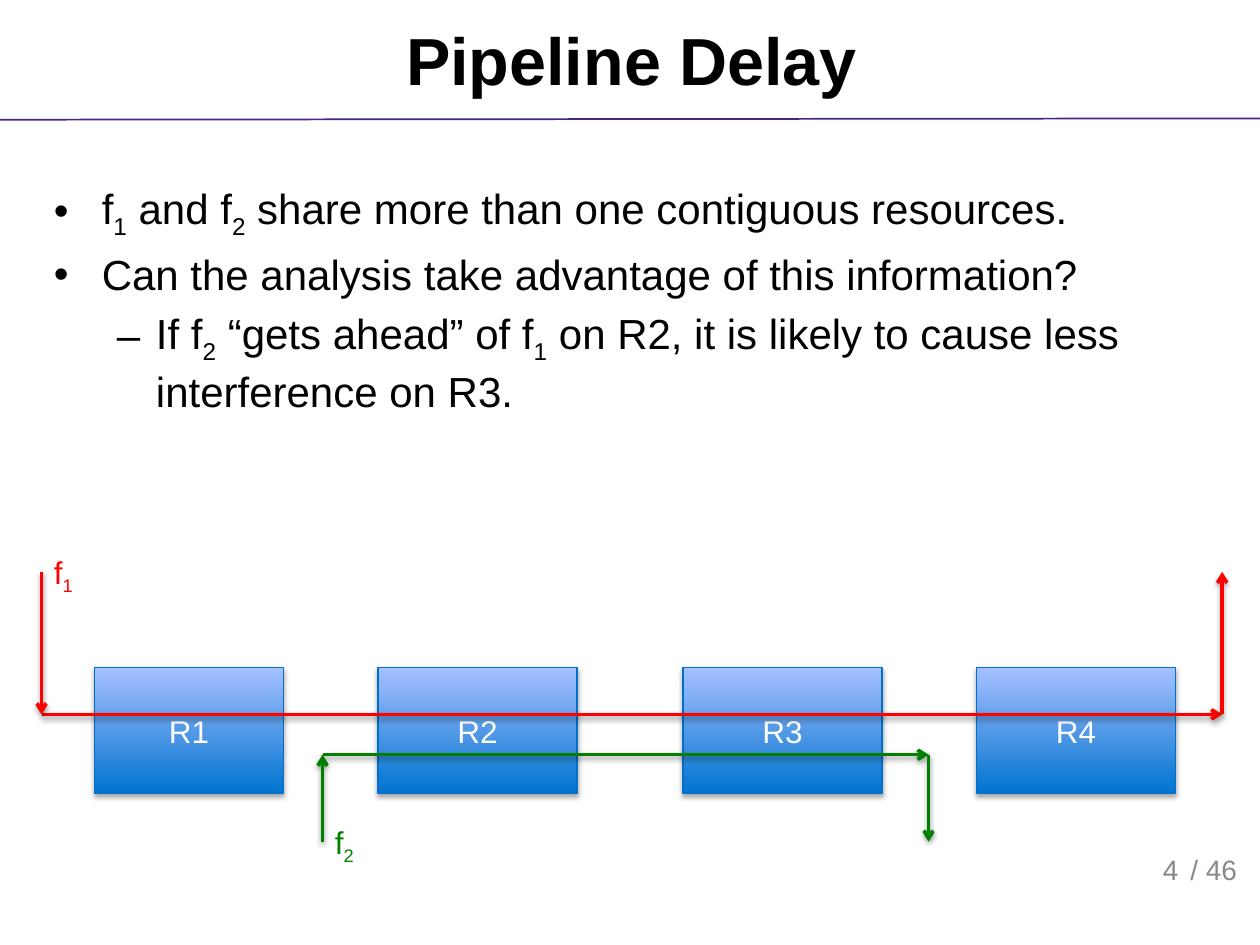
from lxml.etree import SubElement
from pptx import Presentation
from pptx.dml.color import RGBColor
from pptx.enum.shapes import MSO_CONNECTOR, MSO_SHAPE
from pptx.enum.text import MSO_ANCHOR, PP_ALIGN
from pptx.oxml.ns import qn
from pptx.util import Inches, Pt

COLORS = {
    "text": "000000",
    "page": "898989",
    "rule": "4A2384",
    "box_bottom": "0073CF",
    "box_top": "A6C0FF",
    "box_line": "0070CA",
    "box_text": "FFFFFF",
    "flow_1": "FF0000",
    "flow_2": "008000",
}


def add_shadow(shape, alpha, distance):
    """Give a shape a soft black shadow falling straight down."""
    effects = SubElement(shape._element.spPr, qn("a:effectLst"))
    shadow = SubElement(effects, qn("a:outerShdw"), blurRad=str(Pt(3.1)),
                        dist=str(Pt(distance)), dir="5400000", rotWithShape="0")
    black = SubElement(shadow, qn("a:srgbClr"), val="000000")
    SubElement(black, qn("a:alpha"), val=str(alpha * 1000))


def write_text(paragraph, text, size, color, align=PP_ALIGN.LEFT, bold=False):
    """Fill a paragraph; the character after each underscore is a subscript."""
    paragraph.alignment = align
    paragraph.font.name = "Arial"
    paragraph.font.size = Pt(size)
    paragraph.font.bold = bold
    paragraph.font.color.rgb = RGBColor.from_string(COLORS[color])
    first, *others = text.split("_")
    paragraph.add_run().text = first
    for part in others:
        subscript = paragraph.add_run()
        subscript.text = part[0]
        subscript._r.get_or_add_rPr().set("baseline", "-25000")
        if part[1:]:
            paragraph.add_run().text = part[1:]


presentation = Presentation()
presentation.slide_width = Inches(10)
presentation.slide_height = Inches(7.5)
slide = presentation.slides.add_slide(presentation.slide_layouts[6])
shapes = slide.shapes

# Rule under the title
rule = shapes.add_connector(MSO_CONNECTOR.STRAIGHT, Inches(0), Inches(0.95),
                            Inches(10), Inches(0.94))
rule.line.color.rgb = RGBColor.from_string(COLORS["rule"])
rule.line.width = Pt(1)
SubElement(rule._element.spPr, qn("a:effectLst"))

# Title, page number and flow labels
texts = [
    ("Pipeline Delay", 0.33, 0, 9.37, 0.94, 38, "text",
     PP_ALIGN.CENTER, MSO_ANCHOR.MIDDLE, True),
    ("4", 8.39, 6.68, 1.06, 0.4, 16, "page",
     PP_ALIGN.RIGHT, MSO_ANCHOR.BOTTOM, False),
    ("/ 46", 9.35, 6.68, 1.06, 0.4, 16, "page",
     PP_ALIGN.LEFT, MSO_ANCHOR.BOTTOM, False),
    ("f_1", 0.33, 4.34, 0.37, 0.4, 18, "flow_1",
     PP_ALIGN.LEFT, MSO_ANCHOR.TOP, False),
    ("f_2", 2.56, 6.48, 0.37, 0.4, 18, "flow_2",
     PP_ALIGN.LEFT, MSO_ANCHOR.TOP, False),
]
for text, left, top, width, height, size, color, align, anchor, bold in texts:
    text_box = shapes.add_textbox(Inches(left), Inches(top), Inches(width), Inches(height))
    text_box.text_frame.word_wrap = not text.startswith("f_")
    text_box.text_frame.vertical_anchor = anchor
    write_text(text_box.text_frame.paragraphs[0], text, size, color, align, bold)

# Bulleted body: bullet, left margin, hanging indent, text
bullets = [
    ("•", 0.38, -0.38, "f_1 and f_2 share more than one contiguous resources."),
    ("•", 0.38, -0.38, "Can the analysis take advantage of this information?"),
    ("–", 0.81, -0.31,
     "If f_2 “gets ahead” of f_1 on R2, it is likely to cause less interference on R3."),
]
body = shapes.add_textbox(Inches(0.33), Inches(1.4), Inches(9.37), Inches(2.17))
body_frame = body.text_frame
body_frame.word_wrap = True
for index, (bullet, margin, indent, text) in enumerate(bullets):
    paragraph = body_frame.add_paragraph() if index else body_frame.paragraphs[0]
    paragraph.level = 1 if bullet == "–" else 0
    if index:
        paragraph.space_before = Pt(5)
    properties = paragraph._p.get_or_add_pPr()
    properties.set("marL", str(Inches(margin)))
    properties.set("indent", str(Inches(indent)))
    SubElement(properties, qn("a:buFont"), typeface="Arial")
    SubElement(properties, qn("a:buChar"), char=bullet)
    write_text(paragraph, text, 24, "text")

# Resource boxes
resources = [("R1", 0.75, 1.5), ("R2", 3, 1.58), ("R3", 5.42, 1.58), ("R4", 7.75, 1.58)]
for name, left, width in resources:
    box = shapes.add_shape(MSO_SHAPE.RECTANGLE, Inches(left), Inches(5.3),
                           Inches(width), Inches(1))
    box.fill.gradient()
    box.fill.gradient_angle = 90
    for stop, color in zip(box.fill.gradient_stops, ("box_bottom", "box_top")):
        stop.color.rgb = RGBColor.from_string(COLORS[color])
    box.line.color.rgb = RGBColor.from_string(COLORS["box_line"])
    box.line.width = Pt(0.75)
    add_shadow(box, 35, 1.8)
    box.text_frame.vertical_anchor = MSO_ANCHOR.MIDDLE
    write_text(box.text_frame.paragraphs[0], name, 18, "box_text", PP_ALIGN.CENTER)

# Flow arrows: color, left and right ends, level of the run, outer level
flows = [("flow_1", 0.33, 9.7, 5.67, 4.54), ("flow_2", 2.56, 7.37, 5.99, 6.68)]
for color, left, right, level, outer in flows:
    segments = [
        (left, level, right, level),
        (left, outer, left, level),
        (right, level, right, outer),
    ]
    for segment in segments:
        arrow = shapes.add_connector(MSO_CONNECTOR.STRAIGHT, *map(Inches, segment))
        arrow.line.color.rgb = RGBColor.from_string(COLORS[color])
        arrow.line.width = Pt(2)
        SubElement(arrow.line._get_or_add_ln(), qn("a:tailEnd"), type="arrow")
        add_shadow(arrow, 38, 1.6)

presentation.save("out.pptx")
